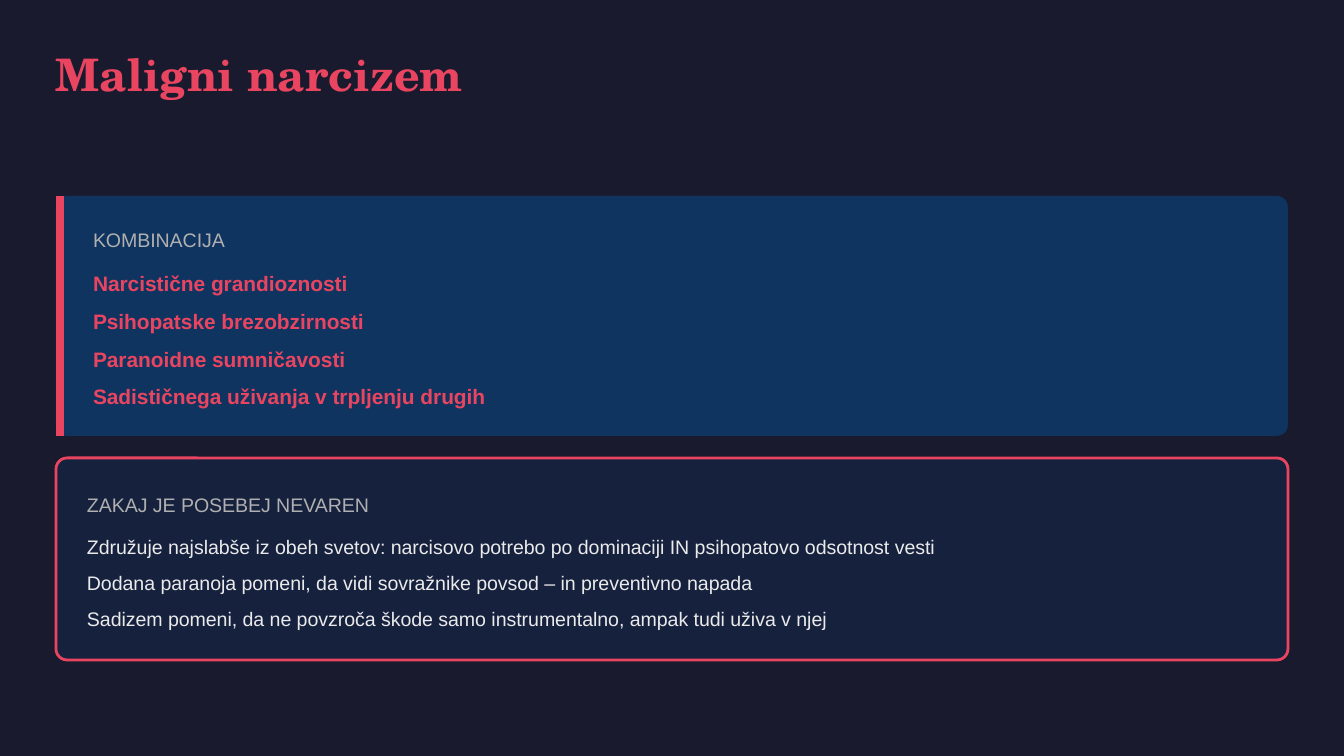
from pptx import Presentation
from pptx import util as u
from pptx.dml.color import RGBColor
from pptx.enum import shapes, text
from pptx.oxml.ns import qn
from lxml import etree

# Content
TITLE = "Maligni narcizem"
CARDS = [
    {
        "heading": "KOMBINACIJA",
        "items": [
            "Narcistične grandioznosti",
            "Psihopatske brezobzirnosti",
            "Paranoidne sumničavosti",
            "Sadističnega uživanja v trpljenju drugih",
        ],
        "style": "traits", "fill": "panel", "outline": None, "bar": True,
        "top": 196, "height": 240, "radius": 0.047,
        "text_left": 93, "text_width": 1191, "padding": 28,
    },
    {
        "heading": "ZAKAJ JE POSEBEJ NEVAREN",
        "items": [
            "Združuje najslabše iz obeh svetov: narcisovo potrebo po dominaciji IN psihopatovo odsotnost vesti",
            "Dodana paranoja pomeni, da vidi sovražnike povsod – in preventivno napada",
            "Sadizem pomeni, da ne povzroča škode samo instrumentalno, ampak tudi uživa v njej",
        ],
        "style": "reasons", "fill": "panel_dark", "outline": "accent", "bar": False,
        "top": 458, "height": 202, "radius": 0.055,
        "text_left": 87, "text_width": 1193, "padding": 31,
    },
]

# Colours, type and line widths
THEME = {
    "colors": {
        "background": "1A1A2E", "accent": "E94560", "panel": "0F3460",
        "panel_dark": "16213E", "muted": "B0B0B0", "light": "EAEAEA",
    },
    "text": {
        "title": {"name": "TeX Gyre Schola", "size": 24, "bold": True,
                  "color": "accent", "line": 24, "after": 18},
        "heading": {"name": "Arial", "size": 10.5, "bold": False,
                    "color": "muted", "line": 14.7, "after": 7.5},
        "traits": {"name": "Arial", "size": 11.2, "bold": True,
                   "color": "accent", "line": 15.8, "after": 4.5},
        "reasons": {"name": "Arial", "size": 10.5, "bold": False,
                    "color": "light", "line": 14.7, "after": 4.5},
    },
    "outline": 1.5,
    "bar": 4.5,
}

# Layout in px
SLIDE_WIDTH, SLIDE_HEIGHT = 1344, 756
MARGIN = 56
CARD_WIDTH = SLIDE_WIDTH - 2 * MARGIN
BAR_X = MARGIN + 4
HEADING_HEIGHT, LIST_OFFSET = 27, 42
PX_PER_INCH, PX_PER_POINT = 134.4, 134.4 / 72


def px(value):
    return u.Emu(round(value * u.Inches(1) / PX_PER_INCH))


def color(name):
    return RGBColor.from_string(THEME["colors"][name])


def set_attributes(target, values):
    for name, value in values.items():
        setattr(target, name, value)


def fill_placeholder(placeholder, lines, style_name, left, top, width, height):
    """Move a placeholder to the front and give it plain, left-aligned lines."""
    style = THEME["text"][style_name]
    set_attributes(placeholder, {"left": px(left), "top": px(top),
                                 "width": px(width), "height": px(height)})
    placeholder._element.getparent().append(placeholder._element)
    frame = placeholder.text_frame
    set_attributes(frame, {
        "margin_left": 0, "margin_top": 0, "margin_right": 0, "margin_bottom": 0,
        "word_wrap": True, "auto_size": text.MSO_AUTO_SIZE.NONE,
        "vertical_anchor": text.MSO_ANCHOR.TOP,
    })
    for index, line in enumerate(lines):
        paragraph = frame.add_paragraph() if index else frame.paragraphs[0]
        set_attributes(paragraph, {
            "alignment": text.PP_ALIGN.LEFT, "line_spacing": u.Pt(style["line"]),
            "space_before": u.Pt(0), "space_after": u.Pt(style["after"]),
        })
        properties = paragraph._p.get_or_add_pPr()
        properties.set("marL", "0")
        properties.set("indent", "0")
        etree.SubElement(properties, qn("a:buNone"))
        run = paragraph.add_run()
        run.text = line
        set_attributes(run.font, {"name": style["name"], "size": u.Pt(style["size"]),
                                  "bold": style["bold"]})
        run.font.color.rgb = color(style["color"])


def add_card(slide, card):
    panel = slide.shapes.add_shape(
        shapes.MSO_SHAPE.ROUNDED_RECTANGLE,
        px(MARGIN), px(card["top"]), px(CARD_WIDTH), px(card["height"]))
    panel.adjustments[0] = card["radius"]
    panel.shadow.inherit = False
    panel.fill.solid()
    panel.fill.fore_color.rgb = color(card["fill"])
    if card["outline"]:
        panel.line.color.rgb = color(card["outline"])
        panel.line.width = u.Pt(THEME["outline"])
    else:
        panel.line.fill.background()

    # Accent bar on the left edge
    if card["bar"]:
        bar = slide.shapes.add_connector(
            shapes.MSO_CONNECTOR.STRAIGHT, px(BAR_X), px(card["top"]),
            px(BAR_X), px(card["top"] + card["height"]))
        bar.line.color.rgb = color("accent")
        bar.line.width = u.Pt(THEME["bar"])
        etree.SubElement(bar._element.spPr, qn("a:effectLst"))


def main():
    presentation = Presentation()
    presentation.slide_width, presentation.slide_height = px(SLIDE_WIDTH), px(SLIDE_HEIGHT)
    slide = presentation.slides.add_slide(
        presentation.slide_layouts.get_by_name("Comparison"))
    slide.background.fill.solid()
    slide.background.fill.fore_color.rgb = color("background")
    title, *bodies = list(slide.placeholders)

    # Title
    fill_placeholder(title, [TITLE], "title", MARGIN, MARGIN, 630, 44)

    # Cards, each with a heading and a list
    for card, heading, body in zip(CARDS, bodies[::2], bodies[1::2]):
        add_card(slide, card)
        style = THEME["text"][card["style"]]
        count = len(card["items"])
        list_height = (count * style["line"] + (count - 1) * style["after"]) * PX_PER_POINT
        left, width = card["text_left"], card["text_width"]
        top = card["top"] + card["padding"]
        fill_placeholder(heading, [card["heading"]], "heading",
                         left, top, width, HEADING_HEIGHT)
        fill_placeholder(body, card["items"], card["style"],
                         left, top + LIST_OFFSET, width, list_height)

    presentation.save("out.pptx")


if __name__ == "__main__":
    main()
